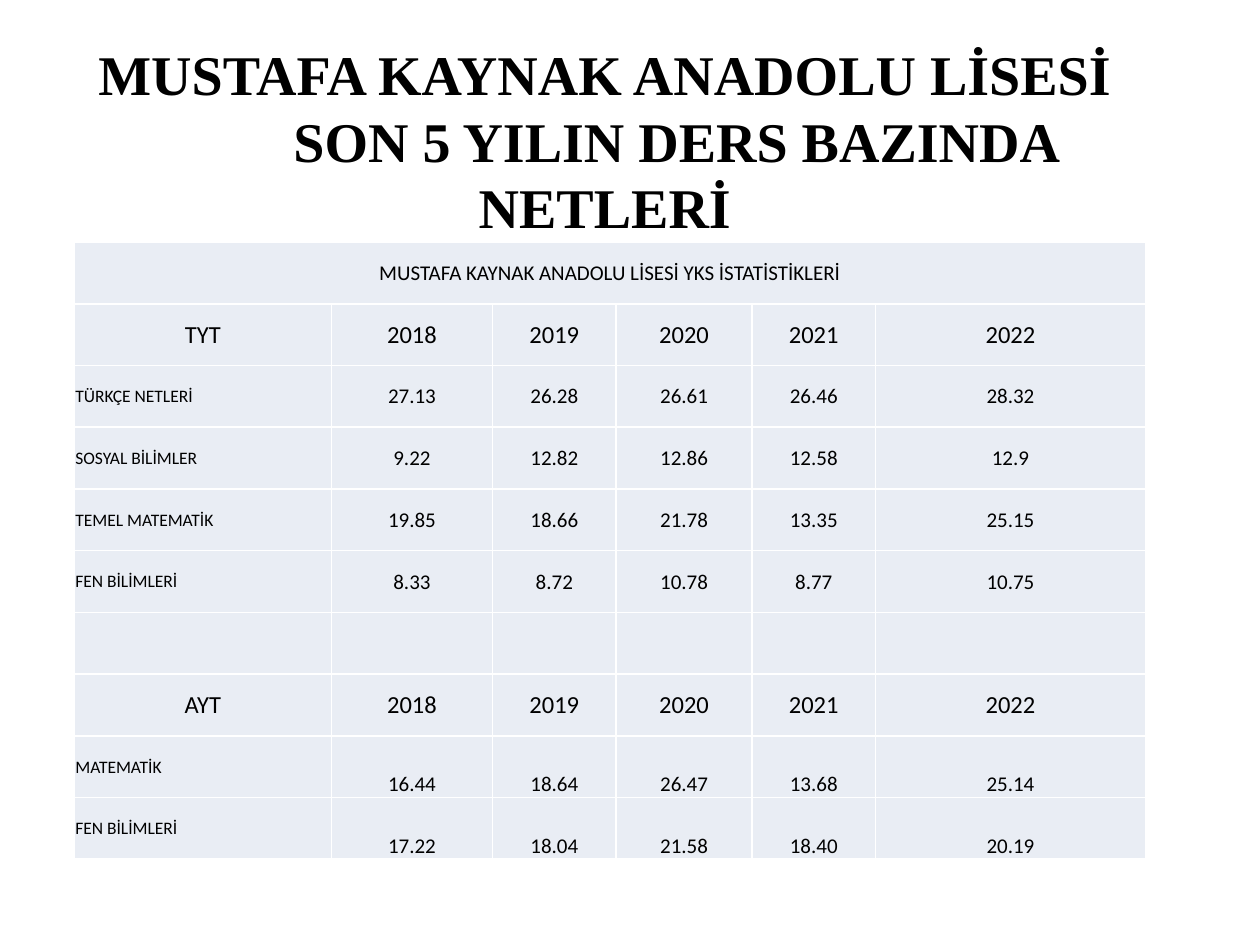
import collections

import lxml.etree
import pptx
import pptx.dml.color
import pptx.enum.text
import pptx.oxml.ns
import pptx.util

Cm = pptx.util.Cm
Pt = pptx.util.Pt
Align = pptx.enum.text.PP_ALIGN
Anchor = pptx.enum.text.MSO_ANCHOR
Box = collections.namedtuple("Box", "left top width height")

COLUMN_WIDTHS = [5.18, 3.25, 2.49, 2.74, 2.49, 5.44]
YEARS = ["2018", "2019", "2020", "2021", "2022"]
CAPTION = "MUSTAFA KAYNAK ANADOLU LİSESİ YKS İSTATİSTİKLERİ"
ROWS = [
    ("caption", [CAPTION]),
    ("header", ["TYT"] + YEARS),
    ("tyt", ["TÜRKÇE NETLERİ", "27.13", "26.28", "26.61", "26.46", "28.32"]),
    ("tyt", ["SOSYAL BİLİMLER", "9.22", "12.82", "12.86", "12.58", "12.9"]),
    ("tyt", ["TEMEL MATEMATİK", "19.85", "18.66", "21.78", "13.35", "25.15"]),
    ("tyt", ["FEN BİLİMLERİ", "8.33", "8.72", "10.78", "8.77", "10.75"]),
    ("gap", []),
    ("header", ["AYT"] + YEARS),
    ("ayt", ["MATEMATİK", "16.44", "18.64", "26.47", "13.68", "25.14"]),
    ("ayt", ["FEN BİLİMLERİ", "17.22", "18.04", "21.58", "18.40", "20.19"]),
]


def color(value):
    """Return the colour for a hex string."""
    return pptx.dml.color.RGBColor.from_string(value)


def write(para, text, size=12, font="Calibri", bold=False, align=Align.CENTER, ink="000000"):
    """Add formatted text to a paragraph."""
    para.alignment = align
    span = para.add_run()
    span.text = text
    span.font.size = Pt(size)
    span.font.name = font
    span.font.bold = bold
    span.font.color.rgb = color(ink)


def set_margins(target, left, top, right, bottom):
    """Set the inner margins of a cell or text frame in centimetres."""
    target.margin_left, target.margin_top = Cm(left), Cm(top)
    target.margin_right, target.margin_bottom = Cm(right), Cm(bottom)


def set_borders(cell, ink, width):
    """Draw a solid line on all four sides of a cell."""
    properties = cell._tc.get_or_add_tcPr()
    for side in ("lnL", "lnR", "lnT", "lnB"):
        line = lxml.etree.SubElement(
            properties, pptx.oxml.ns.qn("a:" + side), w=str(Pt(width)))
        fill = lxml.etree.SubElement(line, pptx.oxml.ns.qn("a:solidFill"))
        lxml.etree.SubElement(fill, pptx.oxml.ns.qn("a:srgbClr"), val=ink)


def add_title(page, box):
    """Place the two-paragraph heading in the box."""
    frame = page.shapes.add_textbox(*map(Cm, box)).text_frame
    frame.word_wrap = True
    frame.vertical_anchor = Anchor.MIDDLE
    set_margins(frame, 0, 0, 0, 0)
    school, subject = frame.paragraphs[0], frame.add_paragraph()
    write(school, "MUSTAFA KAYNAK ANADOLU LİSESİ", size=32, font="Times New Roman", bold=True)
    write(subject, "SON 5 YILIN DERS BAZINDA NETLERİ", size=32, font="Times New Roman", bold=True)
    school._p.get_or_add_pPr().set("marR", str(Cm(0.6)))
    subject._p.get_or_add_pPr().set("indent", str(Cm(2.85)))
    for para in frame.paragraphs:
        para.line_spacing = Pt(38)


def fill_cell(cell, kind, text, is_label):
    """Style one cell and write its text according to the kind of row."""
    set_borders(cell, "FFFFFF", 1)
    cell.fill.solid()
    cell.fill.fore_color.rgb = color("E9EDF4")
    set_margins(cell, 0.02, 0.02, 0.02, 0)
    is_subject = is_label and kind in ("tyt", "ayt")
    is_low = kind == "ayt" and not is_label
    cell.vertical_anchor = Anchor.BOTTOM if is_low else Anchor.MIDDLE
    if text:
        size = 14 if kind == "header" else 10 if is_subject else 12
        write(cell.text_frame.paragraphs[0], text, size=size,
              align=Align.LEFT if is_subject else Align.CENTER)


def add_scores(page, box):
    """Place the table of yearly scores in the box."""
    table = page.shapes.add_table(len(ROWS), len(COLUMN_WIDTHS), *map(Cm, box)).table
    table.first_row = table.horz_banding = False
    for column, width in zip(table.columns, COLUMN_WIDTHS):
        column.width = Cm(width)
    for index, (kind, texts) in enumerate(ROWS):
        table.rows[index].height = Cm(box.height / len(ROWS))
        for place in range(len(COLUMN_WIDTHS)):
            text = texts[place] if place < len(texts) else ""
            fill_cell(table.cell(index, place), kind, text, place == 0)
    table.cell(0, 0).merge(table.cell(0, len(COLUMN_WIDTHS) - 1))


def main():
    """Build the slide and save it."""
    deck = pptx.Presentation()
    deck.slide_width, deck.slide_height = Cm(25.4), Cm(19.05)
    page = deck.slides.add_slide(deck.slide_layouts[6])
    add_title(page, Box(1.7, 1.52, 21.59, 2.62))
    add_scores(page, Box(1.5, 4.88, 21.59, 12.45))
    deck.save("out.pptx")


if __name__ == "__main__":
    main()
